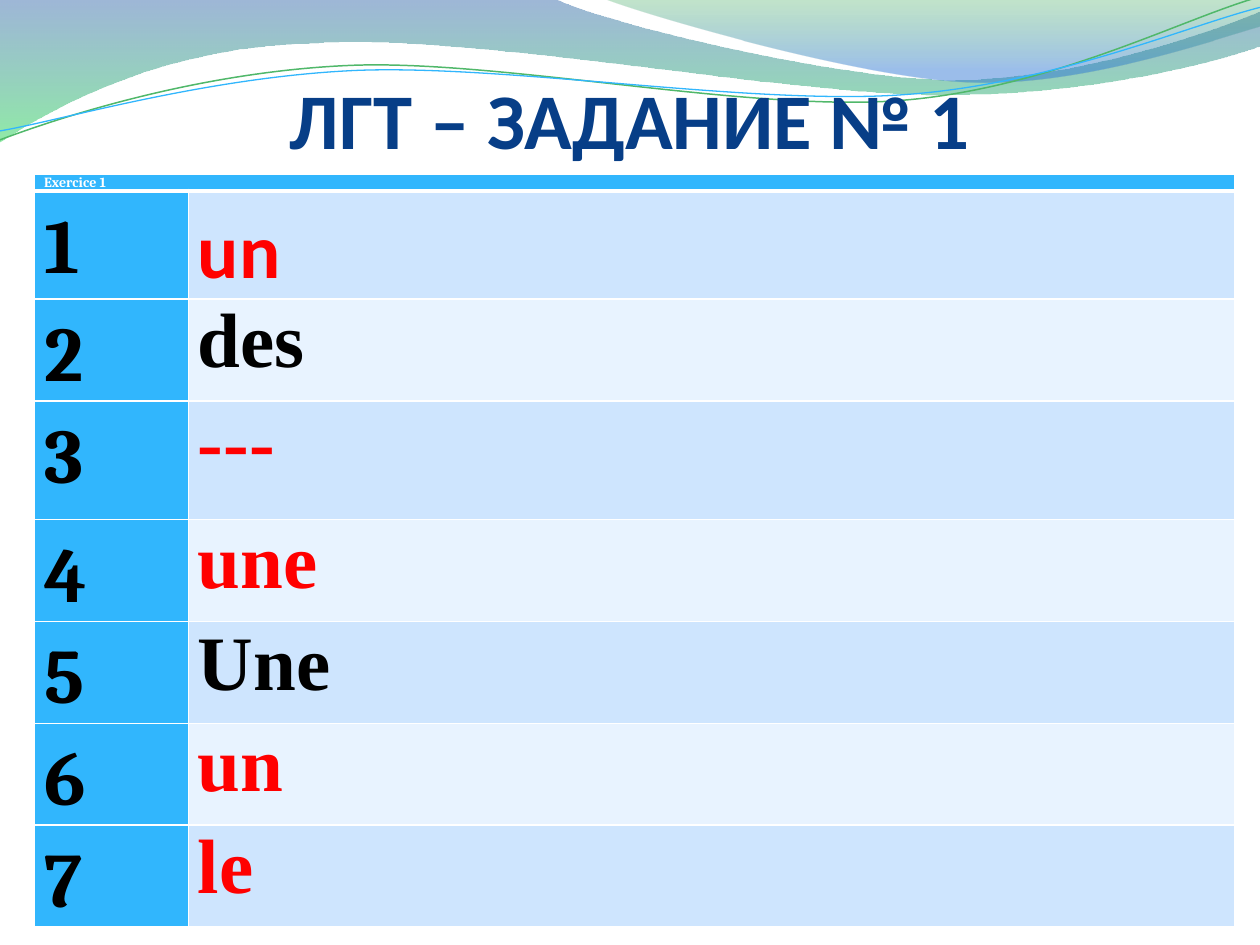
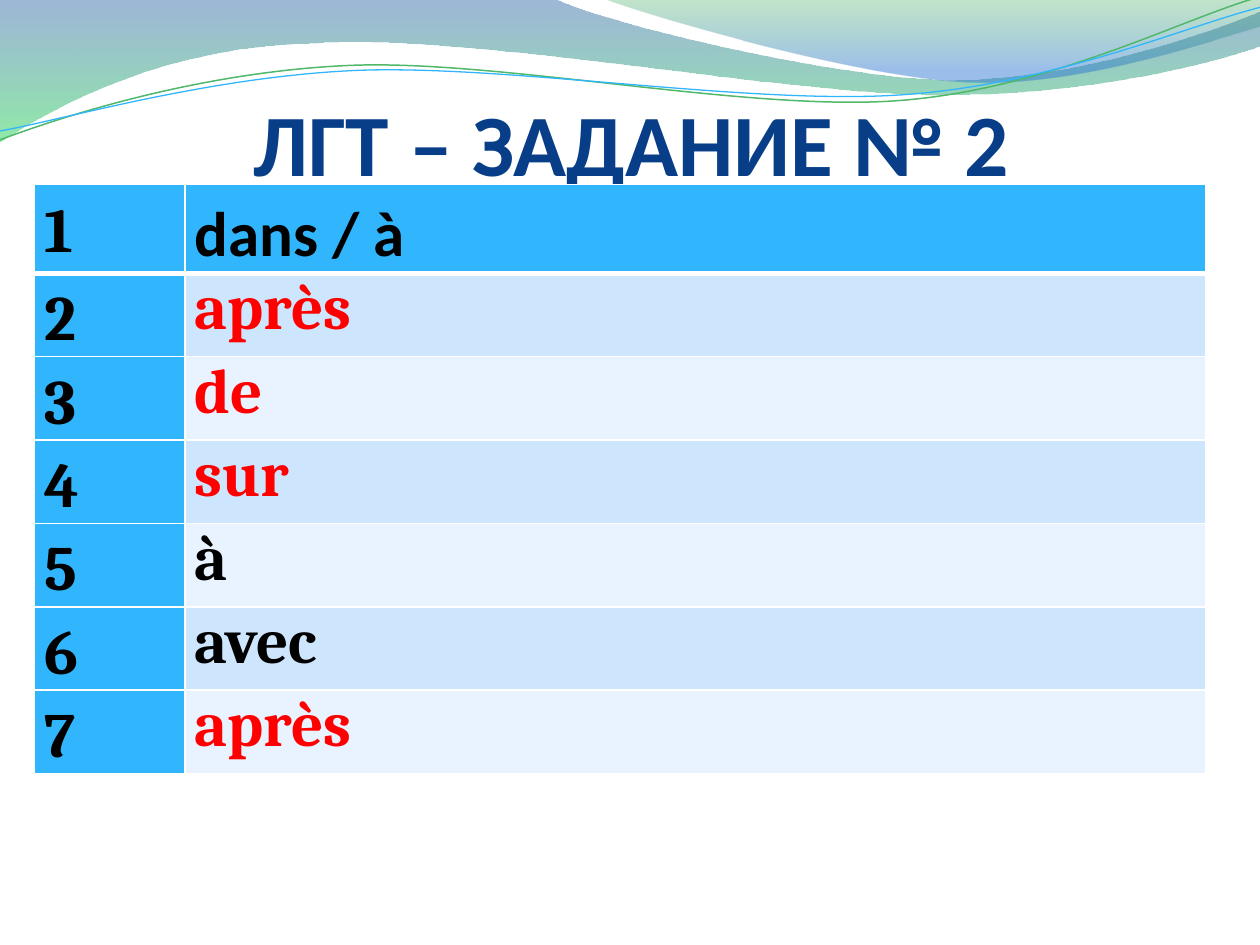
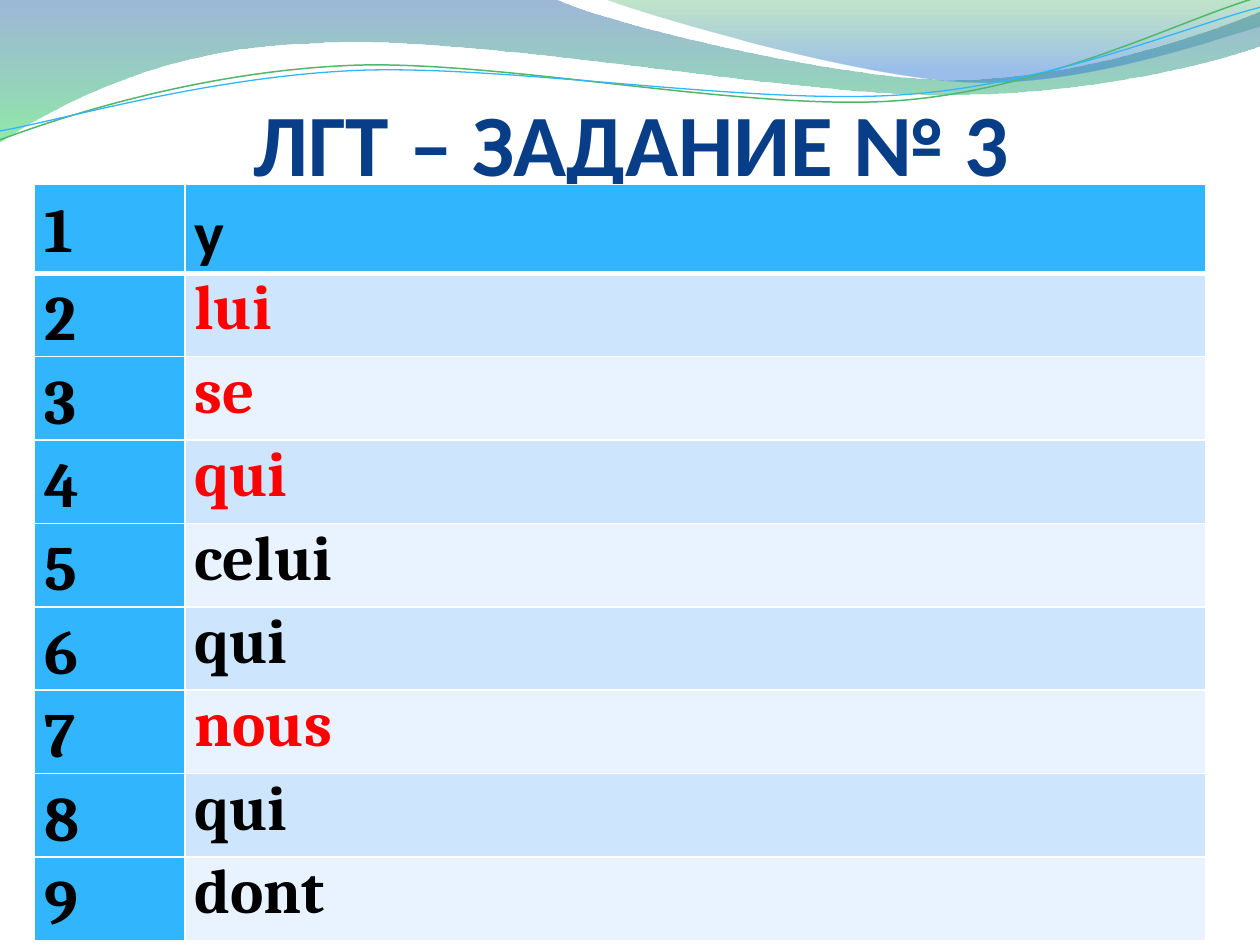
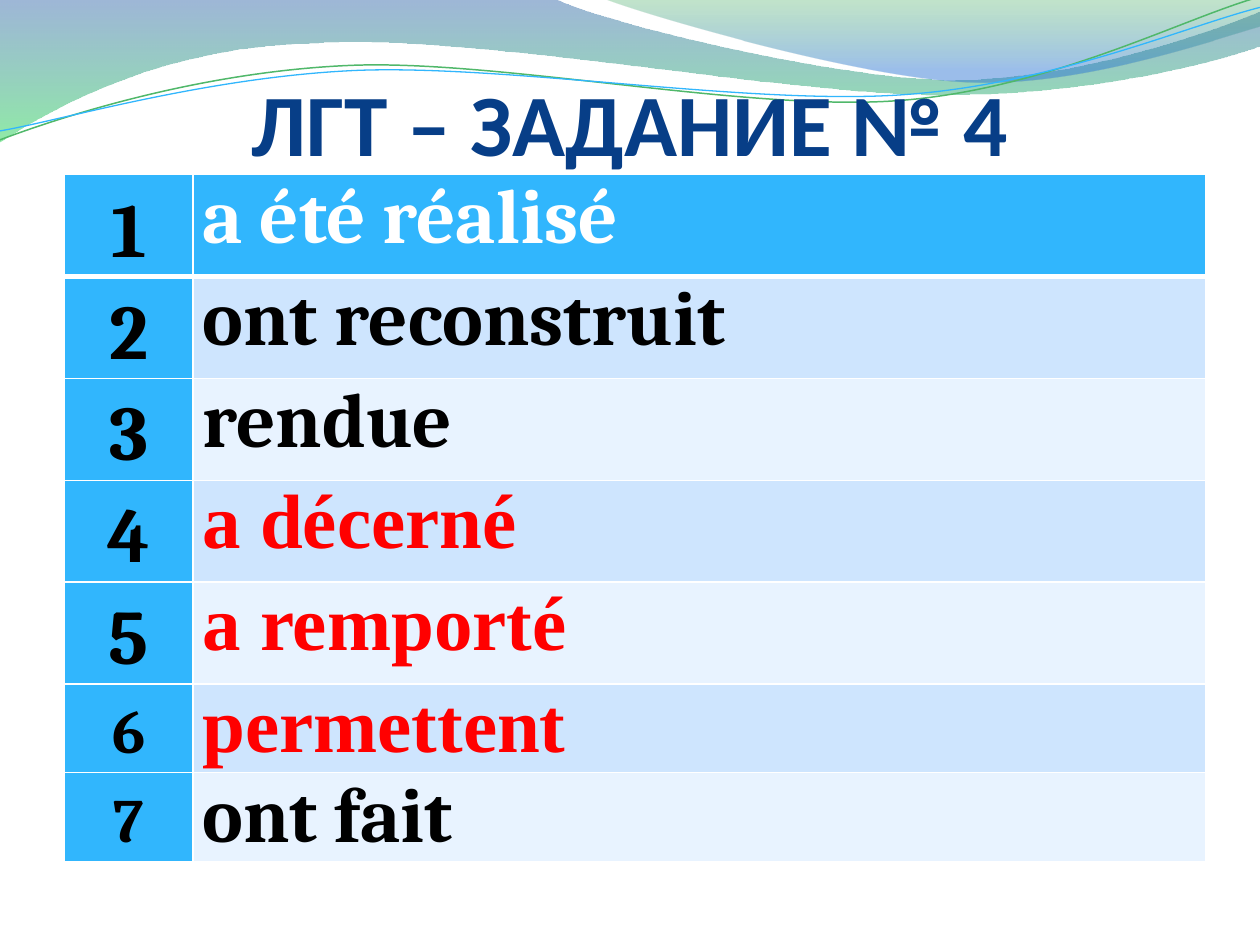
from dataclasses import dataclass

from lxml.etree import SubElement
from pptx import Presentation
from pptx.dml.color import RGBColor
from pptx.enum.text import MSO_ANCHOR, MSO_AUTO_SIZE, PP_ALIGN
from pptx.oxml.ns import qn
from pptx.util import Cm, Pt


@dataclass(frozen=True)
class Theme:
    title: str = "073E87"
    accent: str = "31B6FD"
    bands: tuple = ("E8F3FF", "CEE5FE")
    green: str = "50B86A"
    white: str = "FFFFFF"
    black: str = "000000"
    red: str = "FF0000"
    sans: str = "Calibri"
    serif: str = "Cambria"
    times: str = "Times New Roman"
    header_size: int = 8
    rule: int = 1
    thick_rule: int = 3


T = Theme()

# Content: answers are (text, colour, font); lengths are in centimetres
SPACED = dict(before=3, after=3)
NUMBER = dict(SPACED, line=1.15)
JUSTIFIED = dict(NUMBER, align=PP_ALIGN.JUSTIFY)

EXERCISES = [
    dict(
        title="ЛГТ – ЗАДАНИЕ № 1", title_size=45, title_box=(1.27, 1.12, 22.86, 2.21),
        header="Exercice 1", size=44, at=(0.7, 3.52), cols=(3.1, 21.1), height=15.57,
        rows=[0.2, 1.42, 1.42, 2.39] + [1.42] * 4,
        answer=SPACED, first_answer=NUMBER,
        answers=[
            ("un", T.red, T.sans), ("des", T.black, T.times), ("---", T.red, T.times),
            ("une", T.red, T.times), ("Une", T.black, T.times),
            ("un", T.red, T.times), ("le", T.red, T.times),
        ],
    ),
    dict(
        title="ЛГТ – ЗАДАНИЕ № 2", title_size=50, title_box=(1.3, 0.73, 22.86, 3.18),
        size=36, at=(0.7, 3.72), cols=(3.03, 20.57), height=12.27,
        rows=[1.09] + [0.91] * 6, first_answer=JUSTIFIED,
        answers=[
            ("dans / à ", T.black, T.sans), ("après", T.red, T.serif),
            ("de", T.red, T.serif), ("sur", T.red, T.serif), ("à", T.black, T.serif),
            ("avec", T.black, T.serif), ("après", T.red, T.serif),
        ],
    ),
    dict(
        title="ЛГТ – ЗАДАНИЕ № 3", title_size=50, title_box=(1.3, 0.73, 22.86, 3.18),
        size=36, at=(0.7, 3.72), cols=(3.03, 20.57), height=15.77,
        rows=[1.09] + [0.91] * 8, first_answer=JUSTIFIED,
        answers=[
            ("y", T.black, T.sans), ("lui", T.red, T.serif), ("se", T.red, T.serif),
            ("qui", T.red, T.serif), ("celui", T.black, T.serif),
            ("qui", T.black, T.serif), ("nous", T.red, T.serif),
            ("qui", T.black, T.serif), ("dont", T.black, T.serif),
        ],
    ),
    dict(
        title="ЛГТ – ЗАДАНИЕ № 4", title_size=50, title_box=(1.27, 0.92, 22.86, 2.59),
        size=44, at=(1.3, 3.52), cols=(2.59, 20.42), height=14.43,
        rows=[1.68, 1.57, 1.37, 1.55, 1.52, 1.32, 1.24],
        answer=SPACED, last_answer={}, number_align=PP_ALIGN.CENTER, small_from=6,
        answers=[
            ("a été réalisé", T.white, T.serif), ("ont reconstruit", T.black, T.serif),
            ("rendue", T.black, T.serif), ("a décerné", T.red, T.times),
            ("a remporté", T.red, T.times), ("permettent", T.red, T.times),
            ("ont fait", T.black, T.serif),
        ],
    ),
]

# Waves: a segment of one point is a line, a segment of three points is a curve;
# a gradient stop is (position, colour, opacity in percent)
WAVES = [
    dict(
        start=(0, 0),
        segments=[
            [(11.18, -0.03)],
            [(12.09, 0.43), (16.87, 1.6), (19.25, 1.6)],
            [(21.67, 1.6), (24.33, 0.66), (25.4, 0.23)],
            [(25.43, 0.91)],
            [(24.97, 1.12), (22.1, 1.93), (18.95, 1.91)],
            [(15.8, 1.91), (9.7, 0.71), (6.53, 0.86)],
            [(3.28, 0.91), (1.17, 2.11), (-0.03, 2.87)],
            [(0, 0)],
        ],
        stops=[(0, "2960A7", 45), (1, "35DA5E", 55)],
    ),
    dict(
        start=(12.17, -0.03),
        segments=[
            [(12.93, 0.28), (17.32, 1.57), (19.53, 1.65)],
            [(21.74, 1.75), (24.41, 0.81), (25.4, 0.53)],
            [(25.4, 0)],
            [(12.17, -0.03)],
        ],
        stops=[(0, "36A752", 30), (0.8, "2472D3", 45)],
    ),
    dict(
        start=(0, 2.82),
        segments=[
            [(1.22, 2.36), (4.01, 1.45), (7.04, 1.32)],
            [(10.03, 1.19), (15.06, 2.26), (18.11, 2.03)],
            [(21.16, 1.8), (23.83, 0.38), (25.35, -0.05)],
        ],
        line=(T.green, 0.85),
    ),
    dict(
        start=(0, 2.64),
        segments=[
            [(1.19, 2.44), (4.17, 1.55), (7.19, 1.42)],
            [(10.24, 1.3), (15.16, 2.13), (18.21, 1.91)],
            [(21.23, 1.7), (23.9, 0.53), (25.4, 0.15)],
        ],
        line=(T.accent, 0.75),
    ),
]


def rgb(color):
    return RGBColor.from_string(color)


def write(tf, text, *, size, color, font, align=PP_ALIGN.LEFT,
          line=None, before=0, after=0, small_caps=False):
    p = tf.paragraphs[0]
    p.alignment = align
    p.line_spacing = line
    p.space_before, p.space_after = Pt(before), Pt(after)
    r = p.add_run()
    r.text = text
    r.font.size, r.font.name, r.font.bold = Pt(size), font, True
    r.font.color.rgb = rgb(color)
    if small_caps:
        r._r.get_or_add_rPr().set("cap", "small")


# Waves, kept on the layout so that every slide shows them
def bend(sp, segments):
    """Join the three line steps of each curved segment into one Bézier curve."""
    steps = iter(list(sp.element.spPr.iter(qn("a:lnTo"))))
    for segment in segments:
        first, *others = [next(steps) for _ in segment]
        if others:
            curve = first.makeelement(qn("a:cubicBezTo"))
            first.addprevious(curve)
            for step in (first, *others):
                curve.append(step[0])
                step.getparent().remove(step)


def add_wave(s, start, segments, stops=None, line=None):
    builder = s.shapes.build_freeform(*map(Cm, start))
    points = [(Cm(x), Cm(y)) for segment in segments for x, y in segment]
    builder.add_line_segments(points, close=stops is not None)
    sp = builder.convert_to_shape()
    bend(sp, segments)
    sp.shadow.inherit = False
    if stops:
        sp.line.fill.background()
        sp.fill.gradient()
        sp.fill.gradient_angle = 270
        for stop, (position, color, _) in zip(sp.fill.gradient_stops, stops):
            stop.position = position
            stop.color.rgb = rgb(color)
        colors = sp.element.spPr.iter(qn("a:srgbClr"))
        for clr, (_, _, opacity) in zip(colors, stops):
            SubElement(clr, qn("a:alpha"), val=str(opacity * 1000))
    else:
        sp.fill.background()
        sp.line.color.rgb = rgb(line[0])
        sp.line.width = Pt(line[1])
    return sp


def move_to_layout(sp, layout, index):
    sp.element.nvSpPr.cNvPr.set("id", str(100 + index))
    layout.shapes.element.insert(2 + index, sp.element)


# Table
def format_cell(cell, row, col):
    cell.margin_left = cell.margin_right = Cm(0.19)
    cell.margin_top = cell.margin_bottom = 0
    cell.vertical_anchor = MSO_ANCHOR.TOP
    widths = dict(L=T.rule, R=T.rule,
                  T=T.thick_rule if row == 1 else T.rule,
                  B=T.thick_rule if row == 0 else T.rule)
    tcPr = cell._tc.get_or_add_tcPr()
    for side, width in widths.items():
        ln = SubElement(tcPr, qn(f"a:ln{side}"), w=str(Pt(width)))
        fill = SubElement(ln, qn("a:solidFill"))
        SubElement(fill, qn("a:srgbClr"), val=T.white)
    cell.fill.solid()
    cell.fill.fore_color.rgb = rgb(T.accent if 0 in (row, col) else T.bands[row % 2])


def add_answers(s, ex):
    rows, cols, size = ex["rows"], ex["cols"], ex["size"]
    left, top = ex["at"]
    frame = s.shapes.add_table(len(rows), len(cols), Cm(left), Cm(top),
                               Cm(sum(cols)), Cm(ex["height"]))
    table = frame.table
    for column, width in zip(table.columns, cols):
        column.width = Cm(width)
    for i, height in enumerate(rows):
        table.rows[i].height = Cm(height)
        for j in range(len(cols)):
            format_cell(table.cell(i, j), i, j)
    frame.height = Cm(ex["height"])

    offset = 0
    if "header" in ex:
        table.cell(0, 0).merge(table.cell(0, 1))
        write(table.cell(0, 0).text_frame, ex["header"], size=T.header_size,
              color=T.white, font=T.serif, before=6, after=6)
        offset = 1

    answer = ex.get("answer", {})
    formats = [answer] * len(ex["answers"])
    formats[0] = ex.get("first_answer", answer)
    formats[-1] = ex.get("last_answer", answer)
    small_from = ex.get("small_from", len(rows) + 1)
    for n, ((text, color, font), fmt) in enumerate(zip(ex["answers"], formats), 1):
        row = n - 1 + offset
        small = n >= small_from
        write(table.cell(row, 0).text_frame, str(n), size=size, color=T.black,
              font=T.serif, align=ex.get("number_align", PP_ALIGN.LEFT),
              small_caps=small, **(SPACED if small else NUMBER))
        write(table.cell(row, 1).text_frame, text, size=size, color=color,
              font=font, **fmt)


def set_title(s, ex):
    sp = s.shapes.title
    sp.left, sp.top, sp.width, sp.height = map(Cm, ex["title_box"])
    tf = sp.text_frame
    tf.word_wrap = True
    tf.auto_size = MSO_AUTO_SIZE.NONE
    tf.vertical_anchor = MSO_ANCHOR.BOTTOM
    tf.margin_left = tf.margin_right = tf.margin_bottom = 0
    tf.margin_top = Cm(0.13)
    write(tf, ex["title"], size=ex["title_size"], color=T.title, font=T.sans,
          align=PP_ALIGN.CENTER)


def main():
    prs = Presentation()
    prs.slide_width, prs.slide_height = Cm(25.4), Cm(19.05)
    layout = prs.slide_layouts.get_by_name("Title Only")
    slides = [prs.slides.add_slide(layout) for _ in EXERCISES]
    for i, wave in enumerate(WAVES):
        move_to_layout(add_wave(slides[0], **wave), layout, i)
    for s, ex in zip(slides, EXERCISES):
        set_title(s, ex)
        add_answers(s, ex)
    prs.save("out.pptx")


if __name__ == "__main__":
    main()
